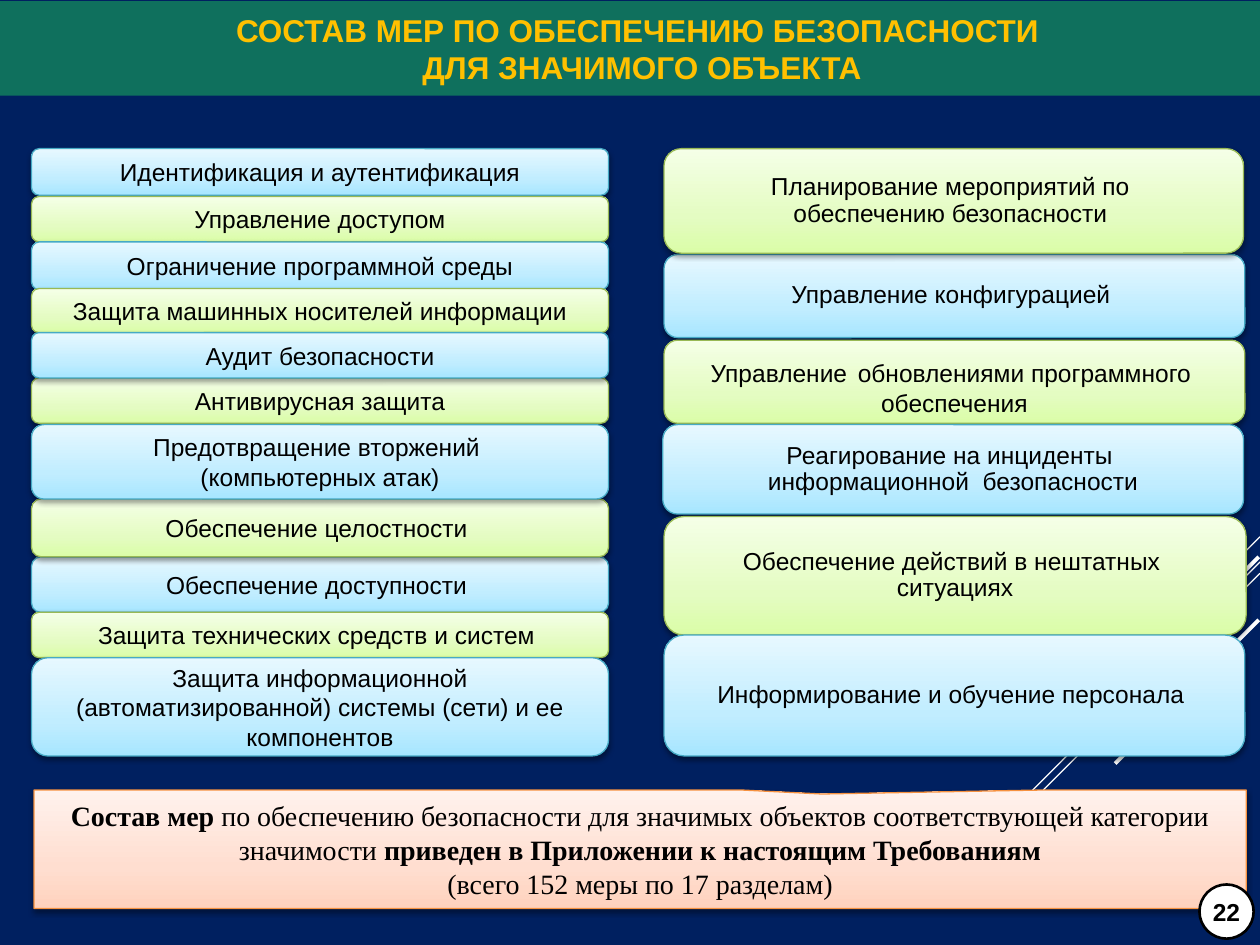
"""Build the slide listing security measures for a significant facility."""
from lxml import etree
from copy import deepcopy
from pptx import Presentation
from pptx.dml.color import RGBColor
from pptx.enum import shapes as s, text as t
from pptx.oxml import ns
from pptx.util import Inches, Pt

rgb = RGBColor.from_string
TONES = {
    "blue": ("A7E6FF", "C1EDFF", "E7F8FF", "46AAC5"),
    "green": ("DAFDA7", "E4FCC2", "F5FFE7", "98B955"),
    "peach": ("FFD2BD", "FFDED0", "FFF2ED", "F69240"),
}


def write(shape, paras, size, font="Arial", color="000000", bold=False, space=None):
    """Fill a shape with centred paragraphs, each a list of runs."""
    frame = shape.text_frame
    frame.vertical_anchor = t.MSO_ANCHOR.MIDDLE
    for i, parts in enumerate(paras):
        para = frame.add_paragraph() if i else frame.paragraphs[0]
        para.alignment = t.PP_ALIGN.CENTER
        para.line_spacing = space
        for part in parts:
            run = para.add_run()
            run.text = part
            run.font.size, run.font.name, run.font.bold = Pt(size), font, bold
            run.font.color.rgb = rgb(color)
    return frame


def panel(kind, box, tone):
    """Add a shape with a vertical gradient, thin border and soft shadow."""
    shape = slide.shapes.add_shape(kind, *map(Inches, box))
    shape.fill.gradient()
    shape.fill.gradient_angle = 90
    stops = shape._element.spPr.find(".//" + ns.qn("a:gsLst"))
    stops.insert(1, deepcopy(stops[0]))
    for stop, place, color in zip(shape.fill.gradient_stops, (0, 0.35, 1), TONES[tone]):
        stop.position = place
        stop.color.rgb = rgb(color)
    shape.line.color.rgb = rgb(TONES[tone][3])
    shape.line.width = Pt(0.75)
    shape.shadow.inherit = False
    glow = shape._element.spPr.find(ns.qn("a:effectLst"))
    shade = etree.SubElement(glow, ns.qn("a:outerShdw"), blurRad=str(Pt(3.1)),
                             dist=str(Pt(1.6)), dir="5400000", rotWithShape="0")
    black = etree.SubElement(shade, ns.qn("a:srgbClr"), val="000000")
    etree.SubElement(black, ns.qn("a:alpha"), val="38000")
    return shape


deck = Presentation()
deck.slide_width, deck.slide_height = Inches(10), Inches(7.5)
slide = deck.slides.add_slide(deck.slide_layouts[5])
slide.background.fill.solid()
slide.background.fill.fore_color.rgb = rgb("002060")

rays = [
    (10, 4.26, 9.17, 5.09, 0.75),
    (10, 4.46, 7.3, 7.17, 0.75),
    (10, 4.55, 8.28, 6.27, 0.75),
    (9.99, 4.42, 8.42, 5.99, 2.25),
    (9.99, 4.92, 8.85, 6.06, 2.25),
]
for *ends, width in rays:
    ray = slide.shapes.add_connector(s.MSO_CONNECTOR.STRAIGHT, *map(Inches, ends))
    ray.line.color.rgb = rgb("FFFFFF")
    ray.line.width = Pt(width)
    etree.SubElement(ray._element.spPr, ns.qn("a:effectLst"))

title = slide.shapes.title
title.left, title.top, title.width, title.height = map(Inches, (0, 0.01, 10, 0.75))
title.fill.solid()
title.fill.fore_color.rgb = rgb("0F705D")
head = write(title, [["СОСТАВ МЕР ПО ОБЕСПЕЧЕНИЮ БЕЗОПАСНОСТИ "], ["ДЛЯ ЗНАЧИМОГО ОБЪЕКТА"]],
             18, color="FFC000", bold=True)
head.auto_size = t.MSO_AUTO_SIZE.NONE
head.margin_left = head.margin_right = head.margin_top = head.margin_bottom = Inches(0.05)
for para in head.paragraphs:
    para._p.get_or_add_pPr().set("marL", str(Inches(0.19)))

left = [
    (1.18, 0.37, "blue", [["Идентификация и аутентификация"]]),
    (4.42, 0.44, "blue", [["Обеспечение доступности "]]),
    (3.96, 0.46, "green", [["Обеспечение целостности "]]),
    (1.56, 0.36, "green", [["Управление доступом"]]),
    (1.92, 0.38, "blue", [["Ограничение программной среды"]]),
    (2.29, 0.35, "green", [["Защита машинных носителей информации"]]),
    (3, 0.36, "green", [["Антивирусная защита"]]),
    (3.37, 0.59, "blue", [["Предотвращение вторжений "], ["(компьютерных атак)"]]),
    (4.86, 0.36, "green", [["Защита технических средств и систем "]]),
    (5.22, 0.78, "blue",
     [["Защита информационной (автоматизированной) системы (сети) и ее компонентов"]]),
    (2.64, 0.36, "blue", [["Аудит безопасности"]]),
]
for top, high, tone, paras in left:
    bar = panel(s.MSO_SHAPE.ROUNDED_RECTANGLE, (0.25, top, 4.58, high), tone)
    write(bar, paras, 14).word_wrap = True

right = [
    (5.27, 2.02, 4.61, 0.66, "blue", [["Управление конфигурацией "]]),
    (5.27, 1.18, 4.6, 0.83, "green",
     [["Планирование мероприятий по "], ["обеспечению безопасности "]]),
    (5.27, 2.7, 4.61, 0.66, "green",
     [["Управление", " ", "обновлениями программного "], ["обеспечения"]]),
    (5.26, 3.37, 4.61, 0.71, "blue",
     [["Реагирование на инциденты "], ["информационной  безопасности"]]),
    (5.27, 4.1, 4.62, 0.94, "green", [["Обеспечение действий в нештатных "], ["ситуациях"]]),
    (5.27, 5.04, 4.61, 0.96, "blue", [["Информирование и обучение персонала "]]),
]
for *box, tone, paras in right:
    card = panel(s.MSO_SHAPE.ROUNDED_RECTANGLE, box, tone)
    frame = write(card, paras, 14, space=0.9)
    frame.word_wrap = False
    for run in frame.paragraphs[0].runs:
        if run.text == " ":
            run.font.size, run.font.name = Pt(24), "Times New Roman"

note = panel(s.MSO_SHAPE.RECTANGULAR_CALLOUT, (0.27, 6.27, 9.62, 0.94), "peach")
note.adjustments[0], note.adjustments[1] = 0.15, -0.466
frame = write(note, [
    ["Состав мер ",
     "по обеспечению безопасности для значимых объектов соответствующей категории значимости ",
     "приведен в Приложении к настоящим Требованиям"],
    ["(всего 152 меры по 17 разделам)"],
], 16, "Times New Roman")
frame.word_wrap = True
for run in frame.paragraphs[0].runs[::2]:
    run.font.bold = True

badge = slide.shapes.add_shape(s.MSO_SHAPE.STAR_16_POINT, *map(Inches, (9.52, 7.02, 0.43, 0.43)))
badge.adjustments[0] = 0.5
badge.shadow.inherit = False
badge.fill.solid()
badge.fill.fore_color.rgb = rgb("FFFFFF")
badge.line.color.rgb = rgb("000000")
badge.line.width = Pt(1.5)
write(badge, [["22"]], 14, bold=True).word_wrap = False

deck.save("out.pptx")
